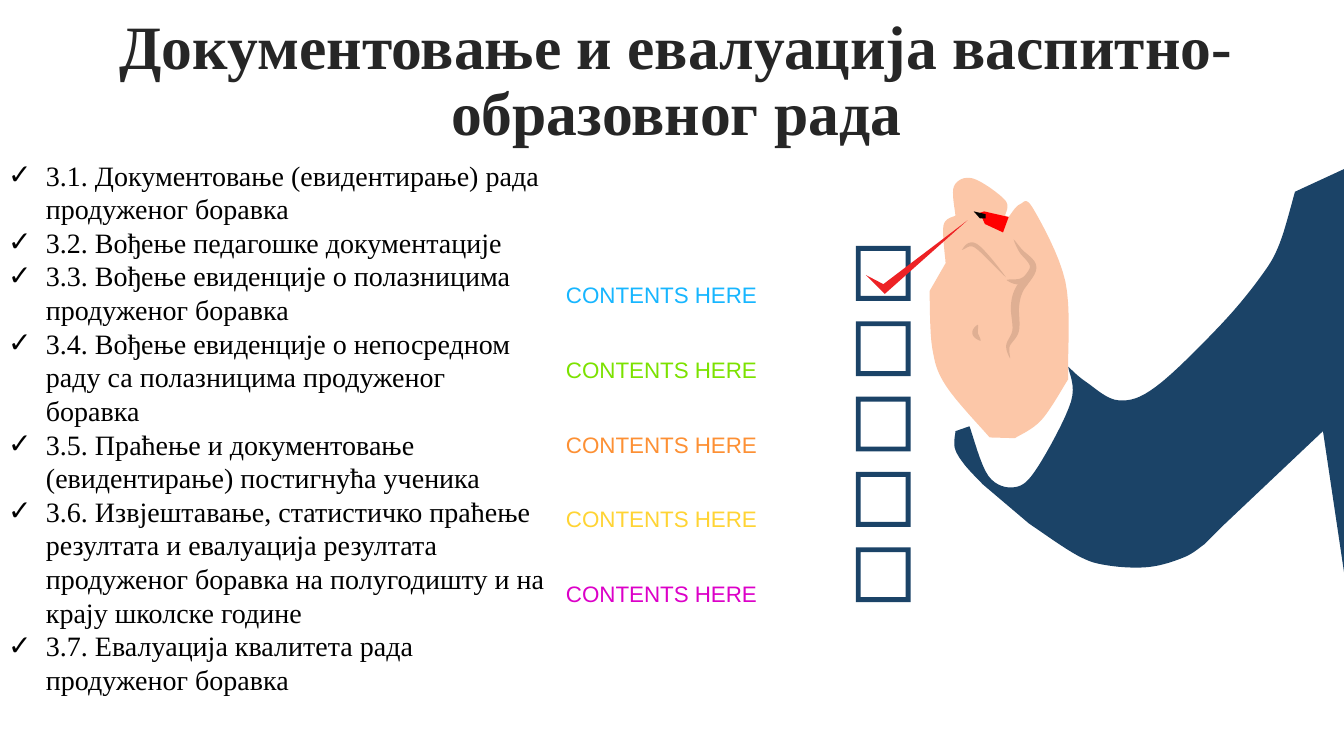
from dataclasses import dataclass
from math import hypot, pi, sin

from lxml.etree import SubElement
from pptx import Presentation
from pptx.dml.color import RGBColor
from pptx.enum.shapes import MSO_SHAPE as Preset
from pptx.enum.text import MSO_ANCHOR as Anchor, MSO_AUTO_SIZE as AutoSize, PP_ALIGN as Align
from pptx.oxml.ns import qn
from pptx.util import Pt


@dataclass(frozen=True)
class Theme:
    """Hold the colours, fonts and type sizes of the slide."""
    serif: str = "Times New Roman"
    sans: str = "Arial"
    title_size: float = 44
    list_size: float = 20
    label_size: float = 16
    title: str = "262626"
    text: str = "000000"
    navy: str = "1B4367"
    skin: str = "FCC7A8"
    crease: str = "DFAF93"
    tick: str = "ED2225"
    pen: str = "FF0000"
    pen_tip: str = "030201"
    labels: tuple = ("17B6FF", "7CE200", "FD9034", "FFD434", "DC00C8")


TITLE = "Документовање и евалуација васпитно-образовног рада"
TOPICS = [
    "3.1. Документовање (евидентирање) рада продуженог боравка",
    "3.2. Вођење педагошке документације",
    "3.3. Вођење евиденције о полазницима продуженог боравка",
    "3.4. Вођење евиденције о непосредном раду са полазницима продуженог боравка",
    "3.5. Праћење и документовање (евидентирање) постигнућа ученика",
    "3.6. Извјештавање, статистичко праћење резултата и евалуација резултата "
    "продуженог боравка на полугодишту и на крају школске године",
    "3.7. Евалуација квалитета рада продуженог боравка",
]


def smooth(*knots, steps=8):
    """Return points on a Catmull-Rom curve through the knots."""
    padded = [knots[0], *knots, knots[-1]]
    curve = [knots[0]]
    for before, start, end, after in zip(padded, padded[1:], padded[2:], padded[3:]):
        for step in range(1, steps + 1):
            t = step / steps
            curve.append(tuple(
                b + t / 2 * (c - a + t * (2 * a - 5 * b + 4 * c - d + t * (3 * b - a - 3 * c + d)))
                for a, b, c, d in zip(before, start, end, after)))
    return curve


def ribbon(width, *knots):
    """Return the outline of a smooth stroke that tapers at both ends."""
    spine = smooth(*knots)
    left, right = [], []
    for index, (x, y) in enumerate(spine):
        (x0, y0), (x1, y1) = spine[max(index - 1, 0)], spine[min(index + 1, len(spine) - 1)]
        reach = width / 2 * sin(pi * index / (len(spine) - 1)) / hypot(x1 - x0, y1 - y0)
        across, down = (y0 - y1) * reach, (x1 - x0) * reach
        left.append((x + across, y + down))
        right.append((x - across, y - down))
    return left + right[::-1]


class Canvas:
    """Draw styled elements on the current slide."""

    def __init__(self, slide, theme):
        self.slide, self.theme = slide, theme

    def style(self, paragraph, font, size, color, bold=False):
        for run in paragraph.runs:
            run.font.name, run.font.size, run.font.bold = font, Pt(size), bold
            run.font.color.rgb = RGBColor.from_string(color)

    def paint(self, shape, color):
        shape.shadow.inherit = False
        shape.fill.solid()
        shape.fill.fore_color.rgb = RGBColor.from_string(color)
        shape.line.fill.background()

    def title(self, text, left, top, width, height):
        shape = self.slide.shapes.title
        shape.left, shape.top, shape.width, shape.height = map(Pt, (left, top, width, height))
        frame = shape.text_frame
        frame.text = text
        frame.word_wrap, frame.auto_size, frame.vertical_anchor = True, AutoSize.NONE, Anchor.MIDDLE
        paragraph = frame.paragraphs[0]
        paragraph.alignment, paragraph.line_spacing = Align.CENTER, 0.9
        self.style(paragraph, self.theme.serif, self.theme.title_size, self.theme.title, True)

    def text_box(self, text, left, top, width, height):
        frame = self.slide.shapes.add_textbox(*map(Pt, (left, top, width, height))).text_frame
        frame.text = text
        frame.word_wrap, frame.auto_size = True, AutoSize.SHAPE_TO_FIT_TEXT
        return frame

    def label(self, text, color, *box):
        frame = self.text_box(text, *box)
        frame.vertical_anchor = Anchor.BOTTOM
        self.style(frame.paragraphs[0], self.theme.sans, self.theme.label_size, color)

    def checklist(self, items, *box):
        frame = self.text_box("\n".join(items), *box)
        frame.margin_left = 0
        for paragraph in frame.paragraphs:
            properties = paragraph._p.get_or_add_pPr()
            properties.set("marL", str(Pt(27)))
            properties.set("indent", str(Pt(-27)))
            SubElement(properties, qn("a:buFont")).set("typeface", self.theme.sans)
            SubElement(properties, qn("a:buChar")).set("char", "✓")
            self.style(paragraph, self.theme.serif, self.theme.list_size, self.theme.text)

    def checkbox(self, left, top, size):
        shape = self.slide.shapes.add_shape(Preset.FRAME, *map(Pt, (left, top, size, size)))
        shape.adjustments[0] = 0.09
        self.paint(shape, self.theme.navy)

    def outline(self, color, *edges):
        corners = [(Pt(x), Pt(y)) for edge in edges for x, y in edge]
        builder = self.slide.shapes.build_freeform(*corners[0])
        builder.add_line_segments(corners[1:], close=True)
        self.paint(builder.convert_to_shape(), color)

    def sleeve(self):
        shoulder = [(1018, 94), (1018, 528), (978, 529), (945, 308), (872, 377)]
        elbow = smooth((860, 389), (846, 398), (821, 405), (792, 404), (770, 397), (735, 374))
        underside = smooth((702, 346), (689, 332), (682, 320), (682.5, 308))
        cuff = smooth((692.5, 304.5), (706, 340), (725, 348), (741, 334), (765, 287), (763, 262))
        upper_side = smooth((763, 262), (776, 273), (799, 286), (826, 276), (872, 232),
                            (901, 197), (914, 174), (925, 137))
        self.outline(self.theme.navy, shoulder, elbow, underside, cuff, upper_side)

    def hand(self):
        heel = smooth((763, 271), (744, 300), (725, 313))
        palm = smooth((707, 312.5), (676, 276), (666, 249), (664, 208))
        knuckle = smooth((675.5, 188), (674, 161), (682.5, 154))
        finger = smooth((682.5, 154), (681.5, 133), (695, 127.5), (718, 143), (718, 154))
        thumb = smooth((720.5, 155), (728.5, 146), (738, 149), (761, 201), (763, 262))
        self.outline(self.theme.skin, heel, palm, knuckle, finger, thumb)

    def creases(self):
        thumb_fold = ribbon(6, (724, 171), (729, 179), (738, 191), (728, 207),
                            (725, 219), (725.5, 236), (720, 247), (721.5, 256))
        side_fold = ribbon(4, (719, 200), (729, 201), (738, 194))
        finger_fold = ribbon(3, (687, 178.5), (697, 175.5), (718.5, 198))
        dimple = ribbon(4, (698.5, 232), (696.5, 238), (700.5, 243.5))
        for crease in (thumb_fold, side_fold, finger_fold, dimple):
            self.outline(self.theme.crease, crease)

    def pen_and_tick(self):
        tick = [(618.5, 196.5), (631, 203), (691, 157.5), (632, 210)]
        barrel = [(720.5, 155), (716.5, 166), (703.5, 160), (700, 152), (703, 151)]
        tip = [(695.5, 151), (704, 153), (704, 156), (700, 156)]
        for color, part in ((self.theme.tick, tick), (self.theme.pen, barrel),
                            (self.theme.pen_tip, tip)):
            self.outline(color, part)


def main():
    """Build and save the slide."""
    presentation = Presentation()
    presentation.slide_width, presentation.slide_height = Pt(960), Pt(540)
    theme = Theme()
    canvas = Canvas(presentation.slides.add_slide(presentation.slide_layouts[5]), theme)
    canvas.title(TITLE, 27.4, 30.6, 911.5, 56.9)
    for row in range(len(theme.labels)):
        canvas.checkbox(611.3, 175.7 + 53.8 * row, 39.2)
    canvas.sleeve()
    canvas.hand()
    canvas.creases()
    canvas.pen_and_tick()
    for row, color in enumerate(theme.labels):
        canvas.label("CONTENTS HERE", color, 397.2, 197.3 + 53.3 * row, 152.6, 26.6)
    canvas.checklist(TOPICS, 5.8, 109.4, 390.2, 395.3)
    presentation.save("out.pptx")


if __name__ == "__main__":
    main()
